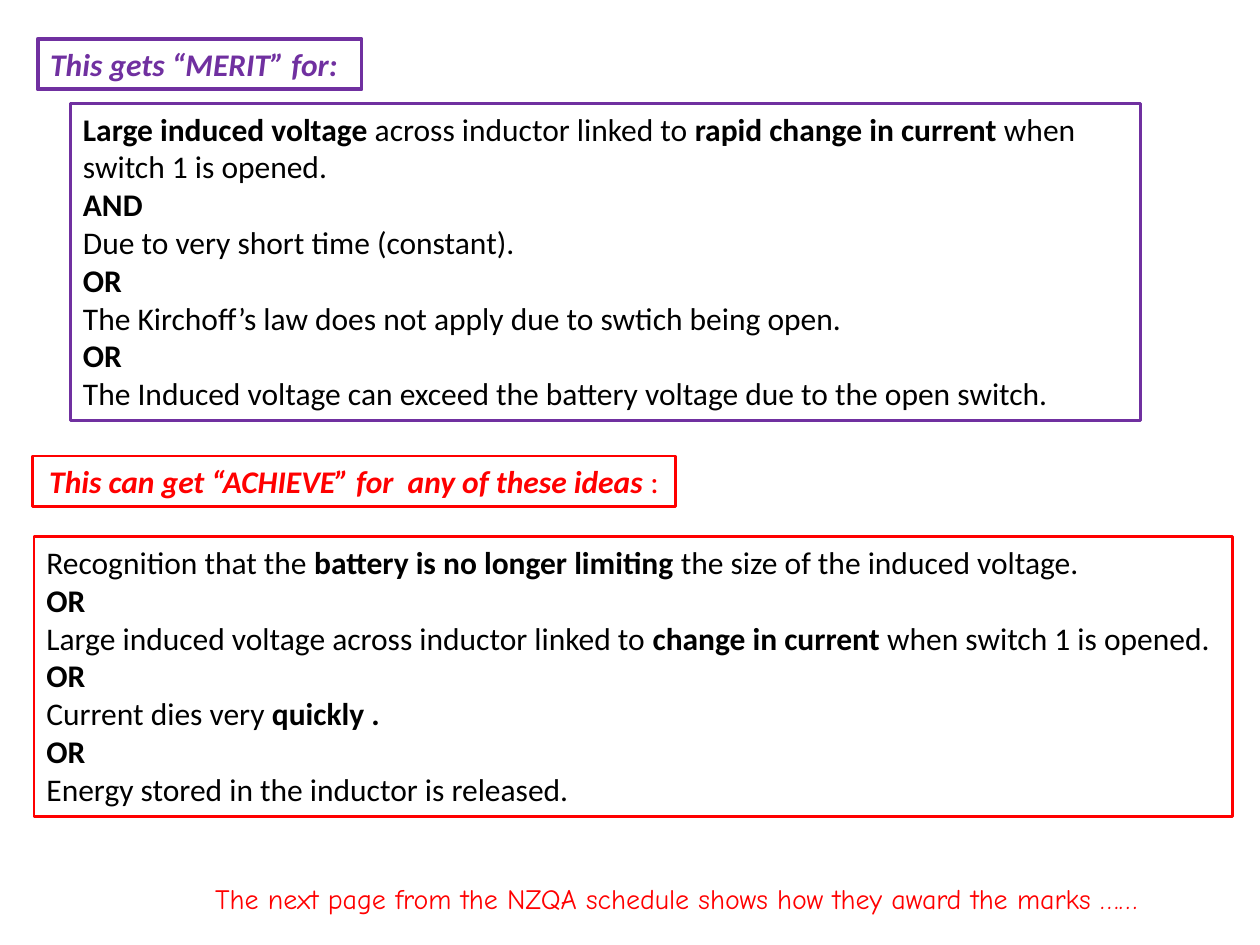
from pptx import Presentation
from pptx.dml.color import RGBColor
from pptx.enum.text import MSO_AUTO_SIZE as AutoSize, PP_ALIGN as Align
from pptx.util import Inches, Pt

COLORS = {"merit": "7030A0", "achieve": "FF0000", "body": "000000"}


class MarkingSlide:
    font_name = "Calibri"
    font_size = 18

    def __init__(self, presentation):
        self.slide = presentation.slides.add_slide(presentation.slide_layouts[6])

    def color(self, key):
        return RGBColor.from_string(COLORS[key])

    def text(self, bounds, lines, color, name=None, size=None,
             italic=False, align=Align.LEFT, wrap=True):
        box = self.slide.shapes.add_textbox(*map(Inches, bounds))
        frame = box.text_frame
        frame.word_wrap = wrap
        frame.auto_size = AutoSize.SHAPE_TO_FIT_TEXT
        for index, line in enumerate(lines):
            paragraph = frame.paragraphs[0] if index == 0 else frame.add_paragraph()
            paragraph.alignment = align
            font = paragraph.font
            font.name = name or self.font_name
            font.size = Pt(size or self.font_size)
            font.color.rgb = self.color(color)
            self.add_runs(paragraph, line, italic)
        return box

    def add_runs(self, paragraph, line, italic):
        pieces = [(part, position % 2 == 1)
                  for position, part in enumerate(line.split("*")) if part]
        fonts = [paragraph.font] if len(pieces) == 1 else []
        for part, strong in pieces:
            run = paragraph.add_run()
            run.text = part
            for font in fonts or [run.font]:
                font.bold = strong
                font.italic = strong and italic

    def framed(self, bounds, lines, border, color="body", width=1.5, **options):
        box = self.text(bounds, lines, color, **options)
        box.line.color.rgb = self.color(border)
        box.line.width = Pt(width)

    def heading(self, bounds, line, color, **options):
        self.framed(bounds, [line], color, color, italic=True, **options)


def main():
    presentation = Presentation()
    presentation.slide_width = Inches(10)
    presentation.slide_height = Inches(7.5)
    marking = MarkingSlide(presentation)

    marking.heading((0.3, 0.31, 2.57, 0.4), "*This gets “MERIT” for:*", "merit",
                    width=2.25, wrap=False)
    marking.heading((0.26, 3.62, 5.1, 0.4),
                    "*This can get “ACHIEVE” for  any of these ideas *:", "achieve",
                    align=Align.CENTER)
    marking.framed((0.56, 0.82, 8.49, 2.52), [
        "*Large induced voltage* across inductor linked to "
        "*rapid change in current* when switch 1 is opened.",
        "*AND*",
        "Due to very short time (constant).",
        "*OR*",
        "The Kirchoff’s law does not apply due to swtich being open.",
        "*OR*",
        "The Induced voltage can exceed the battery voltage due to the open switch.",
    ], "merit")
    marking.framed((0.27, 4.26, 9.51, 2.22), [
        "Recognition that the *battery is no longer limiting* "
        "the size of the induced voltage.",
        "*OR*",
        "Large induced voltage across inductor linked to* change in current *"
        "when switch 1 is opened.",
        "*OR*",
        "Current dies very *quickly .*",
        "*OR*",
        "Energy stored in the inductor is released.",
    ], "achieve")
    marking.text((1.61, 6.95, 8.3, 0.37),
                 ["The next page from the NZQA schedule shows how they award the marks ……"],
                 "achieve", name="Comic Neue", size=16)

    presentation.save("out.pptx")


if __name__ == "__main__":
    main()
